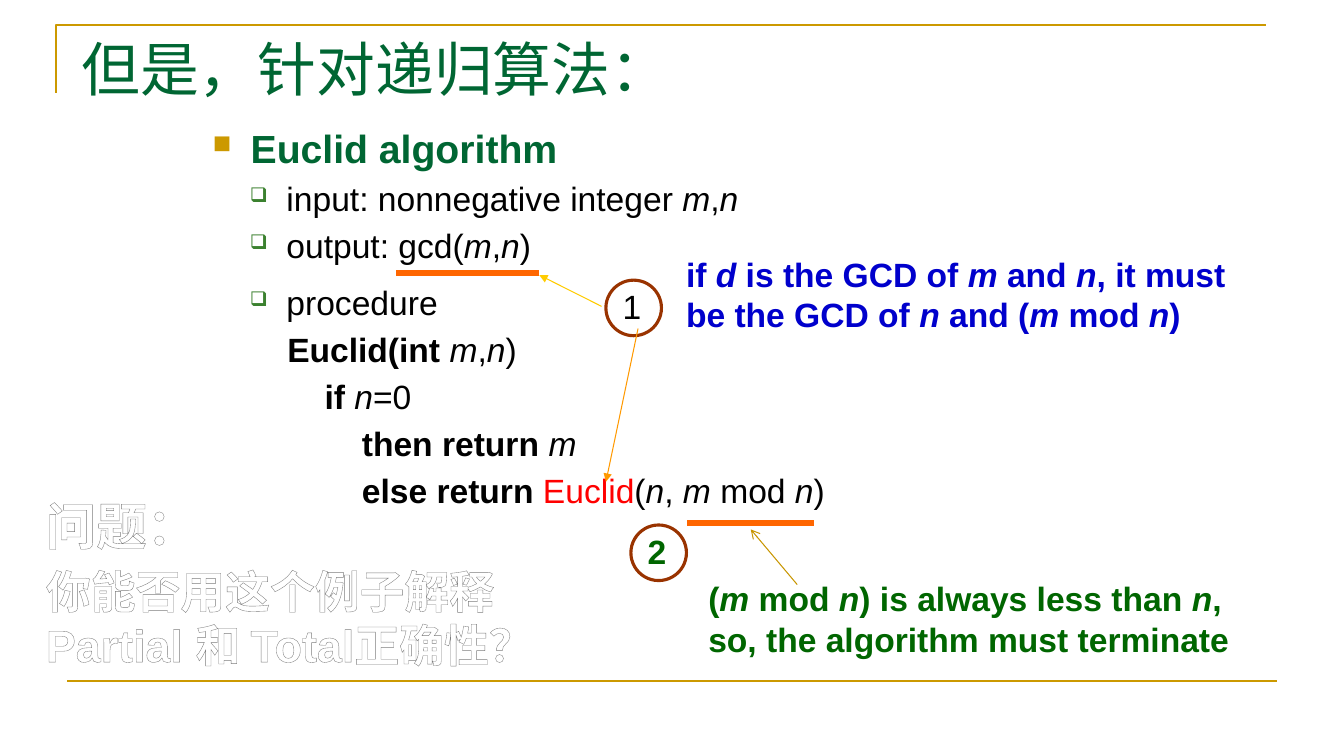
from lxml import etree
from pptx import Presentation
from pptx.dml.color import RGBColor
from pptx.enum.shapes import MSO_CONNECTOR, MSO_SHAPE
from pptx.oxml.ns import qn
from pptx.util import Cm, Pt

STRAIGHT = MSO_CONNECTOR.STRAIGHT
OVAL = MSO_SHAPE.OVAL

GOLD = RGBColor(0xCC, 0x99, 0x00)
DARK_GOLD = RGBColor(0xC8, 0x96, 0x00)
YELLOW = RGBColor(0xFF, 0xCC, 0x00)
AMBER = RGBColor(0xFF, 0x99, 0x00)
ORANGE = RGBColor(0xFF, 0x66, 0x00)
BROWN = RGBColor(0x99, 0x33, 0x00)
TITLE_GREEN = RGBColor(0x00, 0x66, 0x33)
BULLET_GREEN = RGBColor(0x3B, 0x81, 0x2F)
NOTE_GREEN = RGBColor(0x00, 0x66, 0x00)
NOTE_BLUE = RGBColor(0x00, 0x00, 0xCC)
RED = RGBColor(0xFF, 0x00, 0x00)
BLACK = RGBColor(0x00, 0x00, 0x00)
WHITE = RGBColor(0xFF, 0xFF, 0xFF)
GRAY = RGBColor(0x7F, 0x7F, 0x7F)
OUTLINE_GRAY = RGBColor(0x7D, 0x7D, 0x7D)

LINE_HEIGHT = 1.2
CODE_LEFT = 1.88
CODE_STEP = 0.94


def add_child(parent, tag, **attributes):
    child = etree.SubElement(parent, qn(tag))
    for name, value in attributes.items():
        child.set(name, str(value))
    return child


def add_line(slide, start, end, color, width, head=None):
    line = slide.shapes.add_connector(STRAIGHT, *map(Cm, start + end))
    line.line.color.rgb = color
    line.line.width = Pt(width)
    if head:
        add_child(line.line._get_or_add_ln(), "a:tailEnd", type=head)
    add_child(line._element.spPr, "a:effectLst")


def add_text_frame(slide, box):
    frame = slide.shapes.add_textbox(*map(Cm, box)).text_frame
    frame.word_wrap = True
    return frame


def write(paragraph, pieces, size, color, font="Arial", before=0):
    """Write (style, text) pieces: b is bold, r is red, *...* is italic."""
    paragraph.line_spacing = Pt(size * LINE_HEIGHT)
    paragraph.space_before = Pt(before)
    for style, marked in pieces:
        for index, part in enumerate(marked.split("*")):
            if not part:
                continue
            run = paragraph.add_run()
            run.text = part
            run.font.name = font
            run.font.size = Pt(size)
            run.font.bold = "b" in style
            run.font.italic = index % 2 == 1
            run.font.color.rgb = RED if "r" in style else color


def indent(paragraph, left, hanging=0.0):
    properties = paragraph._p.get_or_add_pPr()
    properties.set("marL", str(Cm(left)))
    properties.set("indent", str(-Cm(hanging)))
    return properties


def add_bullet(paragraph, left, hanging, symbol, color, percent):
    properties = indent(paragraph, left, hanging)
    bullet_color = add_child(properties, "a:buClr")
    add_child(bullet_color, "a:srgbClr", val=color)
    add_child(properties, "a:buSzPct", val=percent * 1000)
    add_child(properties, "a:buChar", char=symbol)


def add_frame_lines(slide, left, top, width, height):
    """Draw the corner above the title and the rule at the foot."""
    corner = slide.shapes.build_freeform(Cm(left), Cm(top + 1.7))
    corner.add_line_segments(
        [(Cm(left), Cm(top)), (Cm(left + width), Cm(top))], close=False)
    shape = corner.convert_to_shape()
    shape.fill.background()
    shape.line.color.rgb = GOLD
    shape.line.width = Pt(1.5)
    shape.shadow.inherit = False
    foot_left, foot = left + 0.28, top + height
    add_line(slide, (foot_left, foot), (foot_left + width, foot), GOLD, 1.5)


def add_title(slide, box):
    frame = add_text_frame(slide, box)
    write(frame.paragraphs[0], [("", "但是，针对递归算法：")], 42,
          TITLE_GREEN, "Times New Roman")


def add_algorithm(slide, box):
    frame = add_text_frame(slide, box)
    heading = frame.paragraphs[0]
    write(heading, [("b", "Euclid algorithm")], 28, TITLE_GREEN)
    add_bullet(heading, 0.96, 0.96, "■", GOLD, 65)

    for text, before in (("input: nonnegative integer *m*,*n*", 4.8),
                         ("output: gcd(*m*,*n*)", 4.8),
                         ("procedure", 12)):
        item = frame.add_paragraph()
        write(item, [("", text)], 24, BLACK, before=before)
        add_bullet(item, 1.86, 0.92, "❑", BULLET_GREEN, 60)

    code = (
        (0, [("b", "Euclid(int "), ("", "*m*,*n*)")]),
        (1, [("b", "if "), ("", "*n*=0")]),
        (2, [("b", "then return "), ("", "*m*")]),
        (2, [("b", "else return "), ("r", "Euclid"),
             ("", "(*n*, *m* mod *n*)")]),
    )
    for depth, pieces in code:
        statement = frame.add_paragraph()
        write(statement, pieces, 24, BLACK, before=4.8)
        indent(statement, CODE_LEFT + depth * CODE_STEP)


def add_remark(slide, origin, number, number_style, number_color, note,
               note_color, note_at, underline, arrows):
    """Place a numbered circle at origin and its parts relative to it."""
    left, top = origin

    def at(point):
        return left + point[0], top + point[1]

    circle = slide.shapes.add_shape(OVAL, *map(Cm, (left, top, 1.4, 1.4)))
    circle.fill.background()
    circle.line.color.rgb = BROWN
    circle.line.width = Pt(2.25)
    circle.shadow.inherit = False

    label = add_text_frame(slide, at((0.17, 0.02)) + (0.99, 1.27))
    write(label.paragraphs[0], [(number_style, number)], 24, number_color)
    comment = add_text_frame(slide, at(note_at) + (14.32, 2.31))
    write(comment.paragraphs[0], [("b", note)], 24, note_color)

    add_line(slide, at(underline[0]), at(underline[1]), ORANGE, 4.5)
    for start, end, color, head in arrows:
        add_line(slide, at(start), at(end), color, 0.75, head)


def add_question(slide, box):
    frame = add_text_frame(slide, box)
    lines = (("问题：", 36, 0),
             ("你能否用这个例子解释Partial 和 Total正确性？", 32, 6))
    for index, (text, size, before) in enumerate(lines):
        paragraph = frame.add_paragraph() if index else frame.paragraphs[0]
        write(paragraph, [("b", text)], size, WHITE, before=before)
        outline_text(paragraph.runs[0])


def outline_text(run):
    """Give the run a thin outline and a white-gray-white gradient."""
    properties = run.font._element
    properties.remove(properties.find(qn("a:solidFill")))
    outline = etree.Element(qn("a:ln"), w=str(Pt(0.83)))
    solid = add_child(outline, "a:solidFill")
    add_child(solid, "a:srgbClr", val=OUTLINE_GRAY)
    gradient = etree.Element(qn("a:gradFill"))
    stops = add_child(gradient, "a:gsLst")
    for percent, color in ((0, WHITE), (9, WHITE), (50, GRAY),
                           (79, WHITE), (100, WHITE)):
        stop = add_child(stops, "a:gs", pos=percent * 1000)
        add_child(stop, "a:srgbClr", val=color)
    add_child(gradient, "a:lin", ang=90 * 60000)
    properties.insert(0, outline)
    properties.insert(1, gradient)


def main():
    presentation = Presentation()
    presentation.slide_width = Cm(33.87)
    presentation.slide_height = Cm(19.05)
    slide = presentation.slides.add_slide(presentation.slide_layouts[6])

    add_frame_lines(slide, 1.42, 0.64, 30.48, 16.51)
    add_algorithm(slide, (5.11, 3, 26.24, 11.43))
    add_remark(
        slide, (15.27, 7.06), "1", "", BLACK,
        "if *d* is the GCD of *m* and *n*, it must be the GCD of *n* "
        "and (*m *mod *n*)", NOTE_BLUE, (1.77, -0.79),
        ((-5.29, -0.18), (-1.68, -0.18)),
        [((-0.11, 0.66), (-1.68, -0.13), YELLOW, "triangle"),
         ((0.81, 1.22), (0, 5.08), AMBER, "triangle")])
    add_remark(
        slide, (15.9, 13.23), "2", "b", NOTE_GREEN,
        "(*m* mod *n*) is always less than *n*, so, the algorithm must "
        "terminate", NOTE_GREEN, (1.7, 1.22),
        ((1.42, -0.05), (4.62, -0.05)),
        [((4.19, 1.5), (3.02, 0.11), DARK_GOLD, "arrow")])
    add_question(slide, (0.91, 12.34, 12.6, 4.75))
    add_title(slide, (1.8, 0.69, 30.48, 3.18))
    presentation.save("out.pptx")


if __name__ == "__main__":
    main()
